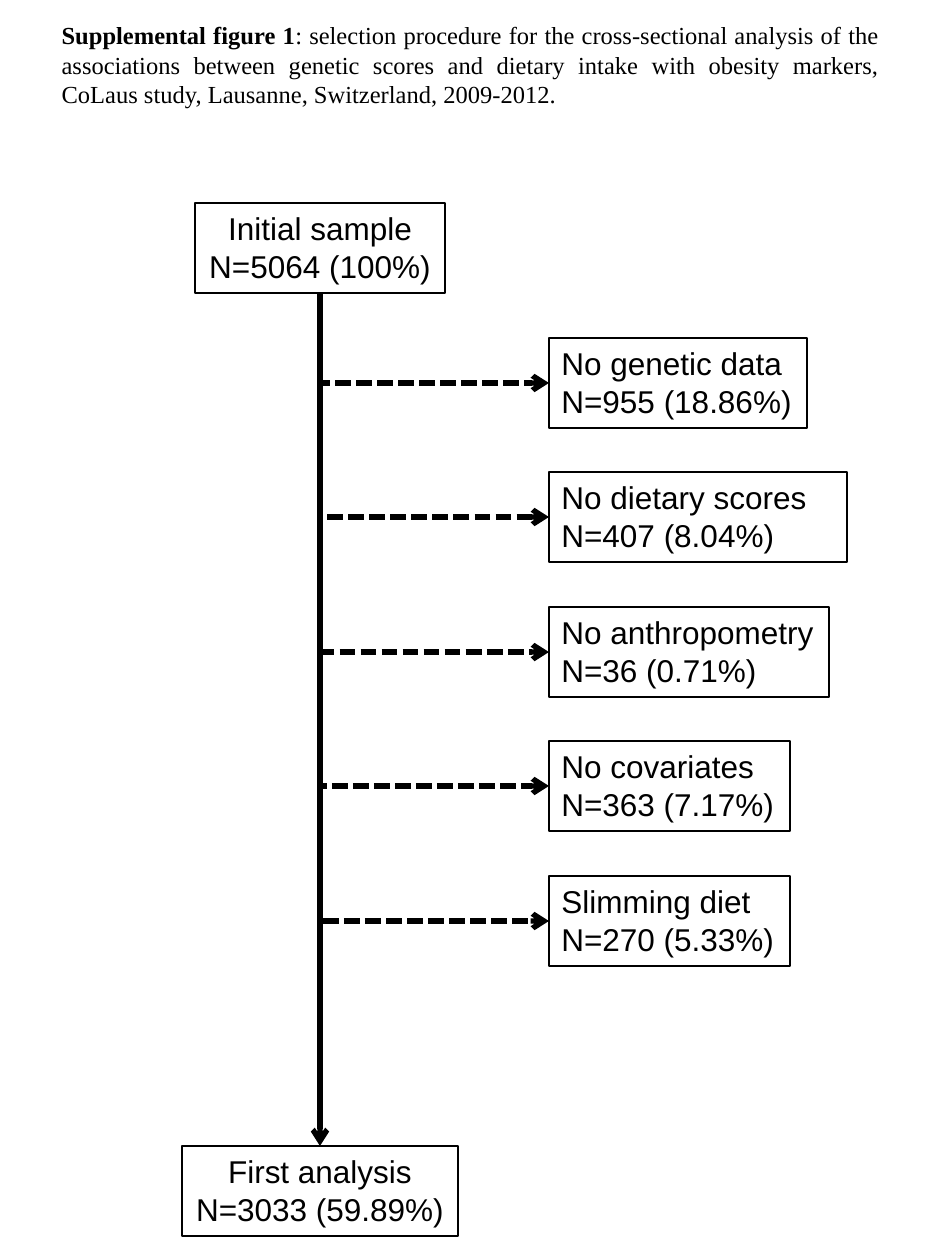
from lxml import etree
from pptx import Presentation
from pptx.dml.color import RGBColor
from pptx.enum.dml import MSO_LINE
from pptx.enum.shapes import MSO_CONNECTOR, MSO_SHAPE
from pptx.enum.text import MSO_ANCHOR, MSO_AUTO_SIZE, PP_ALIGN
from pptx.oxml.ns import qn
from pptx.util import Emu, Pt

STRAIGHT, ELBOW = MSO_CONNECTOR.STRAIGHT, MSO_CONNECTOR.ELBOW
LEFT, CENTER, JUSTIFY = PP_ALIGN.LEFT, PP_ALIGN.CENTER, PP_ALIGN.JUSTIFY
FIT_SHAPE, TOP_ANCHOR = MSO_AUTO_SIZE.SHAPE_TO_FIT_TEXT, MSO_ANCHOR.TOP
RECT, DASH = MSO_SHAPE.RECTANGLE, MSO_LINE.SQUARE_DOT
BLACK = RGBColor(0, 0, 0)
PX_PER_INCH = 126
BOX_H = 90
TRUNK_X = 320
EXCLUDED_X = 549


def px(n):
    return Emu(round(n * 914400 / PX_PER_INCH))


def add_box(x, y, w, lines, align):
    sp = s.shapes.add_shape(RECT, px(x), px(y), px(w), px(BOX_H))
    sp.shadow.inherit = False
    sp.fill.background()
    sp.line.color.rgb = BLACK
    sp.line.width = Pt(0.75)
    tf = sp.text_frame
    tf.text = "\n".join(lines)
    tf.word_wrap = False
    tf.auto_size = FIT_SHAPE
    tf.vertical_anchor = TOP_ANCHOR
    for p in tf.paragraphs:
        p.alignment = align
        p.font.name = "Arial"
        p.font.size = Pt(18)
        p.font.color.rgb = BLACK
    return sp


prs = Presentation()
prs.slide_width, prs.slide_height = px(945), px(1260)
s = prs.slides.add_slide(prs.slide_layouts[5])

# Caption
title = s.shapes.title
title.left, title.top, title.width, title.height = px(49), px(14), px(843), px(102)
tf = title.text_frame
tf.word_wrap = True
tf.auto_size = FIT_SHAPE
tf.vertical_anchor = TOP_ANCHOR
p = tf.paragraphs[0]
p.alignment = JUSTIFY
p.space_before = Pt(12)
p.font.name = "Times New Roman"
p.font.size = Pt(14)
p.font.color.rgb = BLACK
r = p.add_run()
r.text = "Supplemental figure 1"
r.font.bold = True
p.add_run().text = (
    ": selection procedure for the cross-sectional analysis of the associations "
    "between genetic scores and dietary intake with obesity markers, "
    "CoLaus study, Lausanne, Switzerland, 2009-2012."
)

# Start and end of the selection
initial = add_box(195, 203, 250, ["Initial sample", "N=5064 (100%)"], CENTER)
final = add_box(182, 1146, 276, ["First analysis", "N=3033 (59.89%)"], CENTER)
trunk = s.shapes.add_connector(STRAIGHT, px(TRUNK_X), px(293), px(TRUNK_X), px(1146))
trunk.begin_connect(initial, 2)
trunk.end_connect(final, 0)
connectors = [trunk]

# Exclusions, each branching off below the initial sample
exclusions = [
    ("No genetic data", "N=955 (18.86%)", 258),
    ("No dietary scores", "N=407 (8.04%)", 298),
    ("No anthropometry", "N=36 (0.71%)", 280),
    ("No covariates", "N=363 (7.17%)", 241),
    ("Slimming diet", "N=270 (5.33%)", 241),
]
for i, (reason, count, w) in enumerate(exclusions):
    y = 338 + 269 * i // 2
    box = add_box(EXCLUDED_X, y, w, [reason, count], LEFT)
    if reason == "No dietary scores":
        box.text_frame.word_wrap = True
    branch = s.shapes.add_connector(ELBOW, 0, 0, 0, 0)
    branch.begin_connect(initial, 2)
    branch.end_connect(box, 1)
    # A single-bend elbow, turned so that it goes down and then right
    run, drop = box.left - px(TRUNK_X), branch.end_y - branch.begin_y
    mid_x, mid_y = px(TRUNK_X) + run // 2, initial.top + initial.height + drop // 2
    xfrm = branch._element.spPr.find(qn("a:xfrm"))
    for name in ("flipH", "flipV"):
        xfrm.attrib.pop(name, None)
    xfrm.set("rot", "16200000")
    xfrm.set("flipH", "1")
    branch.left, branch.top = mid_x - drop // 2, mid_y - run // 2
    branch.width, branch.height = drop, run
    branch._element.spPr.find(qn("a:prstGeom")).set("prst", "bentConnector2")
    branch.line.dash_style = DASH
    connectors.append(branch)

for c in connectors:
    c.line.color.rgb = BLACK
    c.line.width = Pt(3)
    etree.SubElement(c.line._get_or_add_ln(), qn("a:tailEnd"), type="arrow")
    etree.SubElement(c._element.spPr, qn("a:effectLst"))

prs.save("out.pptx")
